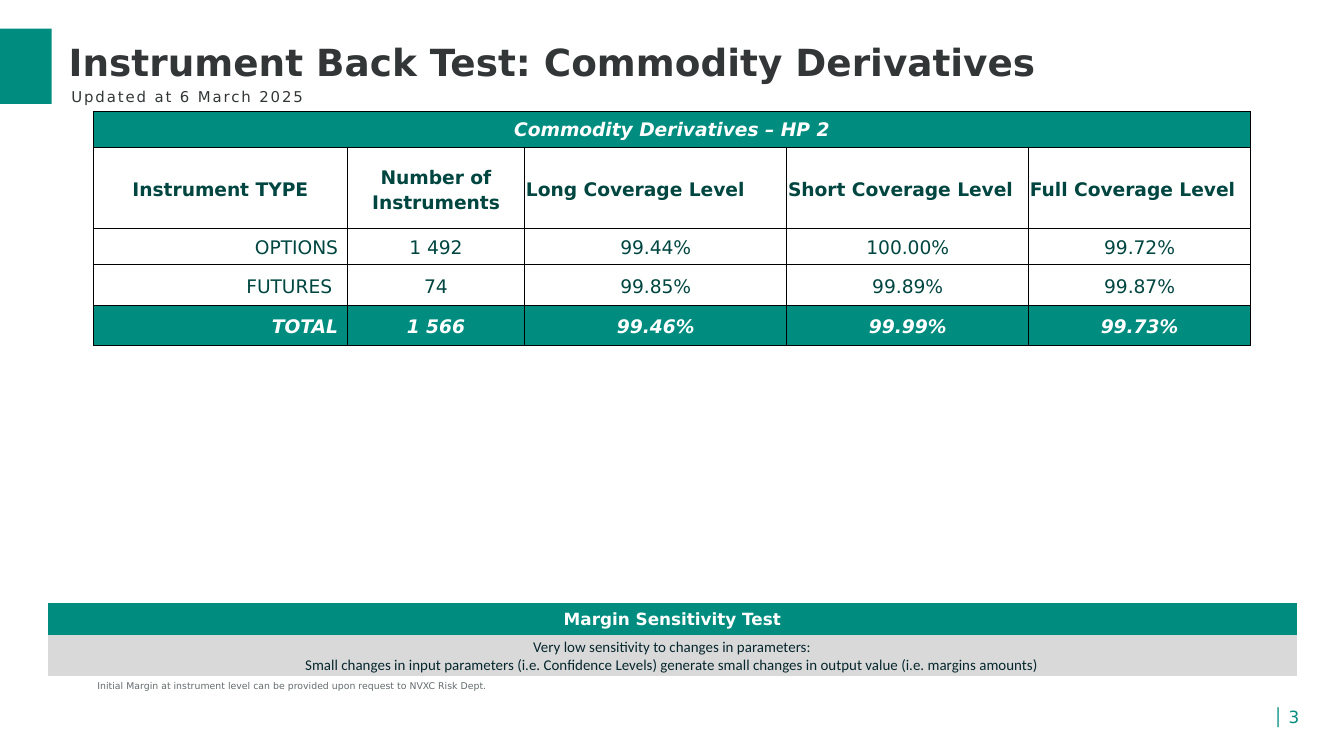
from lxml.etree import SubElement
from pptx import Presentation
from pptx.dml.color import RGBColor
from pptx.enum.shapes import MSO_SHAPE
from pptx.enum.text import MSO_ANCHOR, PP_ALIGN
from pptx.oxml.ns import qn
from pptx.util import Inches, Pt

TEAL = RGBColor(0x00, 0x8D, 0x7F)
DARK_TEAL = RGBColor(0x00, 0x46, 0x40)
CHARCOAL = RGBColor(0x32, 0x36, 0x37)
INK = RGBColor(0x06, 0x26, 0x2D)
GREY = RGBColor(0x64, 0x6B, 0x6E)
PALE_GREY = RGBColor(0xD9, 0xD9, 0xD9)
WHITE = RGBColor(0xFF, 0xFF, 0xFF)
BODY_FONT = "DejaVu Sans"
PLAIN_TABLE_STYLE = "{2D5ABB26-0587-4C30-8999-92F81FD0307C}"
LEFT, CENTER, RIGHT = PP_ALIGN.LEFT, PP_ALIGN.CENTER, PP_ALIGN.RIGHT

deck = Presentation()
deck.slide_width = Inches(10)
deck.slide_height = deck.slide_width * 9 // 16
page = deck.slides.add_slide(deck.slide_layouts[6])
column = deck.slide_width / 100
row = deck.slide_height / 100


def place(left, top, width, height):
    return int(left * column), int(top * row), int(width * column), int(height * row)


def write(frame, text, size, color, align=LEFT, bold=False, italic=False, font=BODY_FONT):
    frame.text = text
    for para in frame.paragraphs:
        para.alignment = align
        for span in para.runs:
            span.font.name = font
            span.font.size = Pt(size)
            span.font.bold = bold
            span.font.italic = italic
            span.font.color.rgb = color


marker = page.shapes.add_shape(MSO_SHAPE.RECTANGLE, *place(0, 3.8, 3.84, 9.96))
marker.shadow.inherit = False
marker.fill.solid()
marker.fill.fore_color.rgb = TEAL
marker.line.fill.background()

labels = [
    ("│ 3", (93.14, 93.51, 5.1, 2.67), 9, TEAL, CENTER, False, (0, 0, 0, 0)),
    ("Instrument Back Test: Commodity Derivatives", (5.12, 5.33, 94.4, 5.51),
     20, CHARCOAL, LEFT, True, (0, 0.05, 0.1, 0.05)),
    ("Updated at 6 March 2025", (4.32, 10.67, 25.1, 4.27),
     8, CHARCOAL, LEFT, False, (0.1, 0.05, 0.1, 0.05)),
    ("Initial Margin at instrument level can be provided upon request to NVXC Risk Dept.",
     (7.25, 89.96, 71, 1.42), 5, GREY, LEFT, False, (0, 0, 0, 0)),
]
for text, area, size, color, align, bold, insets in labels:
    frame = page.shapes.add_textbox(*place(*area)).text_frame
    frame.word_wrap = True
    frame.margin_left, frame.margin_top, frame.margin_right, frame.margin_bottom = map(Inches, insets)
    write(frame, text, size, color, align, bold)
    if bold:
        frame.vertical_anchor = MSO_ANCHOR.MIDDLE
    if text.startswith("Updated"):
        frame.paragraphs[0].runs[0]._r.get_or_add_rPr().set("spc", "100")

sensitivity = page.shapes.add_table(2, 1, *place(3.57, 79.75, 92.9, 9.7)).table
coverage = page.shapes.add_table(6, 5, *place(6.94, 14.75, 86.1, 35.2)).table
layouts = [
    (sensitivity, [92.9], [4.25, 5.45]),
    (coverage, [18.9, 13.2, 19.5, 18, 16.5], [4.8, 10.67, 4.8, 5.4, 5.26, 4.27]),
]
for table, widths, heights in layouts:
    table.first_row = False
    table.horz_banding = False
    table._tbl.tblPr.find(qn("a:tableStyleId")).text = PLAIN_TABLE_STYLE
    for table_column, width in zip(table.columns, widths):
        table_column.width = int(width * column)
    for table_row, height in zip(table.rows, heights):
        table_row.height = int(height * row)
    for cell in table.iter_cells():
        cell.vertical_anchor = MSO_ANCHOR.MIDDLE
        cell.margin_left = cell.margin_right = cell.margin_top = Inches(0.01)
        cell.margin_bottom = 0

heading, finding = sensitivity.iter_cells()
write(heading.text_frame, "Margin Sensitivity Test", 9, WHITE, CENTER, True)
write(finding.text_frame,
      "Very low sensitivity to changes in parameters:\n"
      "Small changes in input parameters (i.e. Confidence Levels) generate small changes "
      "in output value (i.e. margins amounts)",
      8, INK, CENTER, font="Calibri")
for cell, color in ((heading, TEAL), (finding, PALE_GREY)):
    cell.fill.solid()
    cell.fill.fore_color.rgb = color

records = [
    ["Commodity Derivatives – HP 2", "", "", "", ""],
    ["Instrument TYPE", "Number of Instruments", "Long Coverage Level",
     "Short Coverage Level", "Full Coverage Level"],
    ["OPTIONS", "1 492", "99.44%", "100.00%", "99.72%"],
    ["FUTURES ", "74", "99.85%", "99.89%", "99.87%"],
    ["TOTAL", "1 566", "99.46%", "99.99%", "99.73%"],
]
TITLE_ROW, HEADER_ROW, TOTAL_ROW = 0, 1, 4
coverage.cell(0, 0).merge(coverage.cell(0, 4))

for row_number, record in enumerate(records):
    banner = row_number in (TITLE_ROW, TOTAL_ROW)
    for column_number, text in enumerate(record):
        cell = coverage.cell(row_number, column_number)
        sides = ["lnL", "lnR", "lnT"] + ["lnB"] * (row_number != TOTAL_ROW)
        for side in sides:
            border = SubElement(cell._tc.get_or_add_tcPr(), qn(f"a:{side}"), w=str(Pt(0.5)))
            SubElement(SubElement(border, qn("a:solidFill")), qn("a:srgbClr"), val="000000")
        if banner:
            cell.fill.solid()
            cell.fill.fore_color.rgb = TEAL
        else:
            cell.fill.background()
        if not text:
            continue
        align = CENTER
        if row_number == HEADER_ROW and column_number > 1:
            align = LEFT
        elif row_number > HEADER_ROW and column_number == 0:
            align = RIGHT
        write(cell.text_frame, text, 10, WHITE if banner else DARK_TEAL, align,
              banner or row_number == HEADER_ROW, banner)
        if row_number != TITLE_ROW:
            para = cell.text_frame.paragraphs[0]
            para.line_spacing = 1.15
            para.space_after = Pt(6)
            if column_number == 0 or row_number > HEADER_ROW:
                cell.margin_left = cell.margin_right = Inches(0.02 if column_number else 0.07)
                cell.margin_top = 0

for column_number in range(5):
    coverage.cell(5, column_number).fill.background()

deck.save("out.pptx")
